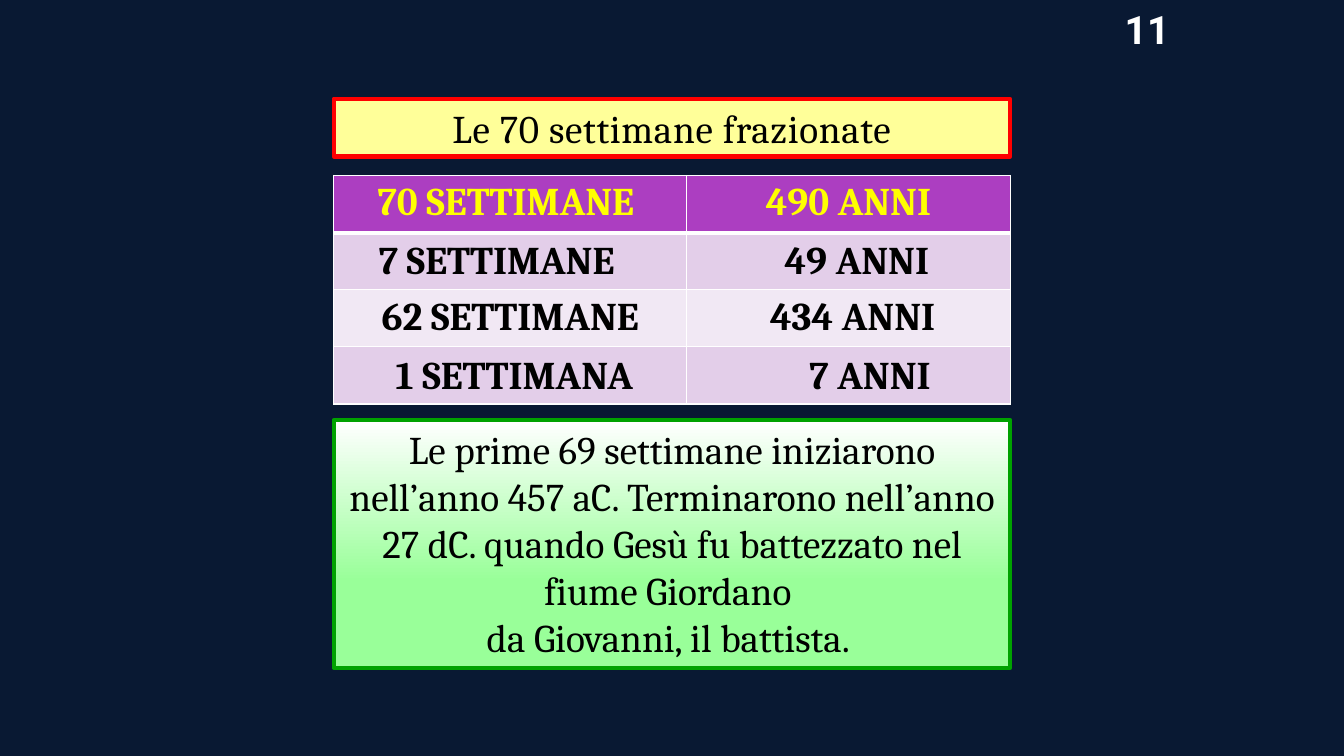
from lxml import etree
from pptx import Presentation
from pptx.dml.color import RGBColor
from pptx.enum import shapes, text
from pptx.oxml import ns
from pptx.util import Pt

NAVY = RGBColor(0x09, 0x19, 0x33)
WHITE = RGBColor(0xFF, 0xFF, 0xFF)
BLACK = RGBColor(0, 0, 0)
YELLOW = RGBColor(0xFF, 0xFF, 0)
PALE_YELLOW = RGBColor(0xFF, 0xFF, 0x99)
RED = RGBColor(0xFF, 0, 0)
PALE_GREEN = RGBColor(0x99, 0xFF, 0x99)
GREEN = RGBColor(0, 0xA2, 0)
PURPLE = RGBColor(0xAC, 0x3E, 0xC1)
LILAC = RGBColor(0xE3, 0xCE, 0xE9)
PALE_LILAC = RGBColor(0xF1, 0xE8, 0xF4)

LEFT, WIDTH = 238.4, 483.2


def write(paragraph, words, color, bold=False, face="Cambria"):
    paragraph.alignment = text.PP_ALIGN.CENTER
    run = paragraph.add_run()
    run.text = words
    run.font.size = Pt(28)
    run.font.name = face
    run.font.bold = bold
    run.font.color.rgb = color
    return run


def add_panel(top, height, border):
    panel = slide.shapes.add_shape(
        shapes.MSO_SHAPE.RECTANGLE, Pt(LEFT), Pt(top), Pt(WIDTH), Pt(height))
    panel.shadow.inherit = False
    panel.line.color.rgb = border
    panel.line.width = Pt(3)
    panel.text_frame.word_wrap = True
    return panel


prs = Presentation()
prs.slide_width, prs.slide_height = Pt(960), Pt(540)
slide = prs.slides.add_slide(prs.slide_layouts[6])
slide.background.fill.solid()
slide.background.fill.fore_color.rgb = NAVY

rows = [
    (PURPLE, YELLOW, 0, ("70 SETTIMANE ", 0), ("490 ANNI", 0)),
    (LILAC, BLACK, 1.4, ("7 SETTIMANE", 25), ("49 ANNI", 12)),
    (PALE_LILAC, BLACK, 0, ("62 SETTIMANE", 0), ("434 ANNI", 6)),
    (LILAC, BLACK, 1.4, ("1 SETTIMANA", 6), ("7 ANNI", 31)),
]
weeks = slide.shapes.add_table(
    len(rows), 2, Pt(LEFT), Pt(125.4), Pt(WIDTH), Pt(163.2)).table
weeks.columns[0].width, weeks.columns[1].width = Pt(252), Pt(231.2)
for r, (fill, color, drop, *entries) in enumerate(rows):
    for c, (words, indent) in enumerate(entries):
        cell = weeks.cell(r, c)
        cell.fill.solid()
        cell.fill.fore_color.rgb = fill
        cell.margin_left = Pt(7.2 + indent)
        cell.margin_top = Pt(3.6 + drop)
        cell.margin_bottom = Pt(3.6 - drop)
        paragraph = cell.text_frame.paragraphs[0]
        write(paragraph, words, color, bold=True)
        if (r, c) == (1, 0):
            paragraph.alignment = text.PP_ALIGN.LEFT
        properties = cell._tc.get_or_add_tcPr()
        for place, side in enumerate(("lnL", "lnR", "lnT", "lnB")):
            thick = (r, side) in ((0, "lnB"), (1, "lnT"))
            border = etree.Element(ns.qn("a:" + side), w=str(Pt(3 if thick else 1)))
            solid = etree.SubElement(border, ns.qn("a:solidFill"))
            etree.SubElement(solid, ns.qn("a:srgbClr"), val=str(WHITE))
            properties.insert(place, border)

history = add_panel(300, 177.1, GREEN)
history.fill.gradient()
history.fill.gradient_angle = 270
for stop, color, position in zip(
        history.fill.gradient_stops, (WHITE, PALE_GREEN), (0, 0.65)):
    stop.color.rgb = color
    stop.position = position
history.text_frame.vertical_anchor = text.MSO_ANCHOR.TOP
write(history.text_frame.paragraphs[0],
      "Le prime 69 settimane iniziarono nell’anno 457 aC. Terminarono "
      "nell’anno 27 dC. quando Gesù fu battezzato nel fiume Giordano ", BLACK)
write(history.text_frame.add_paragraph(), "da Giovanni, il battista. ", BLACK)

number = slide.shapes.add_textbox(Pt(794.2), Pt(0), Pt(50.4), Pt(41))
number.text_frame.word_wrap = False
write(number.text_frame.paragraphs[0], "11", WHITE, bold=True, face="Roboto")

heading = add_panel(70.6, 41.2, RED)
heading.fill.solid()
heading.fill.fore_color.rgb = PALE_YELLOW
heading.text_frame.vertical_anchor = text.MSO_ANCHOR.MIDDLE
title = write(heading.text_frame.paragraphs[0], "Le 70 settimane frazionate", BLACK)
title._r.get_or_add_rPr().set("spc", "50")

prs.save("out.pptx")
